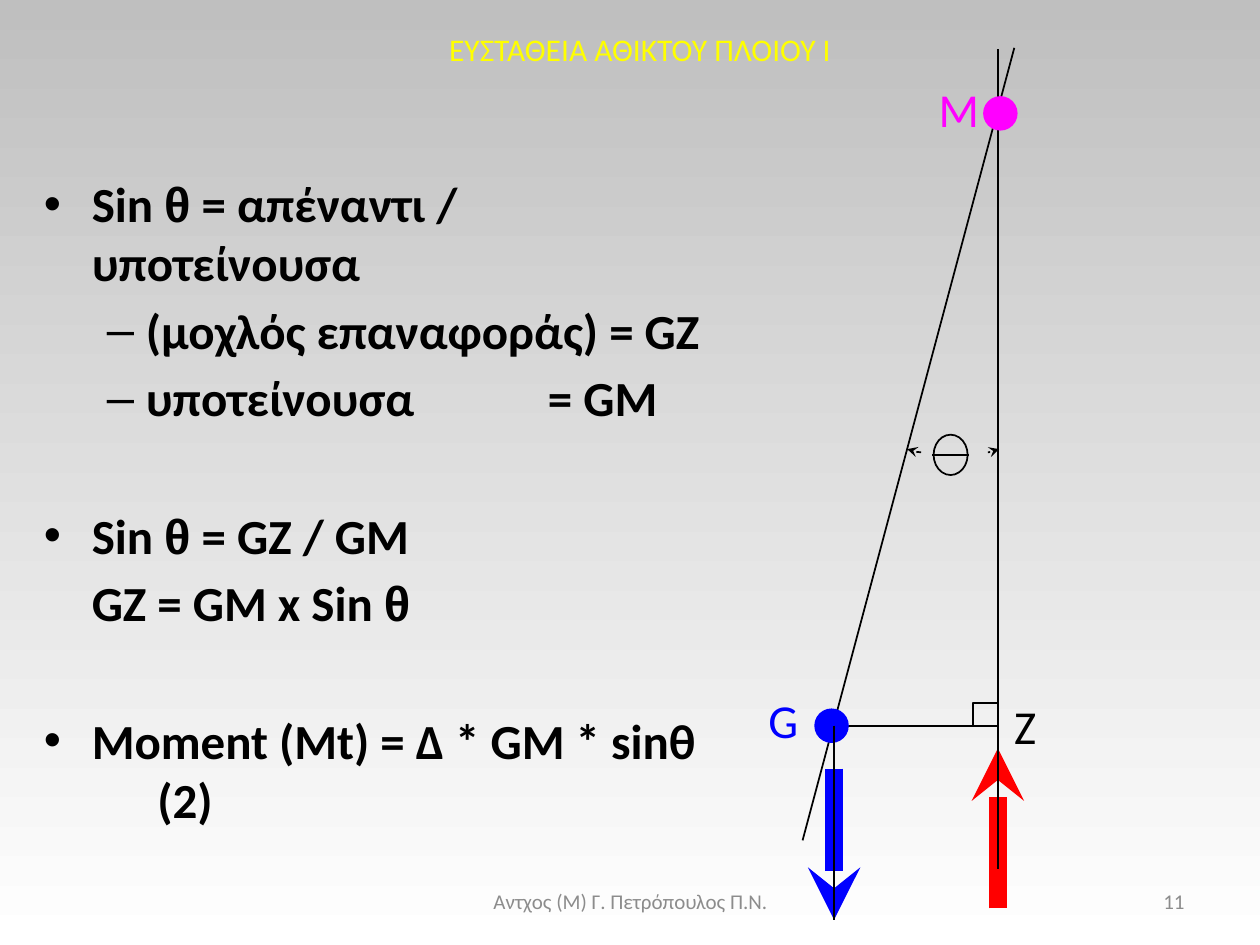
from lxml.etree import SubElement
from pptx import Presentation
from pptx.dml.color import RGBColor
from pptx.enum.shapes import MSO_CONNECTOR, MSO_SHAPE
from pptx.enum.text import MSO_ANCHOR as ANCHOR, PP_ALIGN as ALIGN
from pptx.oxml.ns import qn
from pptx.util import Inches, Pt

COLORS = {
    "top": "BFBFBF", "bottom": "FFFFFF", "title": "FFFF00", "muted": "8C8C8C",
    "ink": "000000", "weight": "0000FF", "buoyancy": "FF0000", "metacentre": "FF00FF",
}
FONT, GREEK_FONT = "Calibri", "Arial"


def rgb(name):
    return RGBColor.from_string(COLORS[name])


def style(target, formats):
    for name, value in formats.items():
        setattr(target, name, value)


def add_run(paragraph, text, color, size, font=FONT, bold=False):
    run = paragraph.add_run()
    run.text = text
    style(run.font, {"name": font, "size": Pt(size), "bold": bold})
    run.font.color.rgb = rgb(color)


def add_label(shapes, box, text, color, size, align=ALIGN.LEFT, wrap=True, spacing=1.0):
    frame = shapes.add_textbox(*map(Inches, box)).text_frame
    style(frame, {"word_wrap": wrap, "vertical_anchor": ANCHOR.MIDDLE})
    style(frame.paragraphs[0], {"alignment": align, "line_spacing": spacing})
    add_run(frame.paragraphs[0], text, color, size)


def set_line(shape, color, width, arrow=False):
    shape.line.color.rgb = rgb(color)
    shape.line.width = Pt(width)
    if arrow:
        SubElement(shape.line._get_or_add_ln(), qn("a:tailEnd"), type="stealth")


def add_line(shapes, start, end, color="ink", width=1, arrow=False):
    line = shapes.add_connector(MSO_CONNECTOR.STRAIGHT, *map(Inches, start + end))
    set_line(line, color, width, arrow)
    SubElement(line._element.spPr, qn("a:effectLst"))


def add_path(shapes, points, close=False, arrow=False):
    corners = [tuple(map(Inches, point)) for point in points]
    builder = shapes.build_freeform(*corners[0])
    builder.add_line_segments(corners[1:], close=close)
    path = builder.convert_to_shape()
    path.fill.background()
    path.shadow.inherit = False
    set_line(path, "ink", 1, arrow)


def add_ellipse(shapes, box, color="ink", filled=True):
    ellipse = shapes.add_shape(MSO_SHAPE.OVAL, *map(Inches, box))
    ellipse.shadow.inherit = False
    if filled:
        ellipse.fill.solid()
        ellipse.fill.fore_color.rgb = rgb(color)
    else:
        ellipse.fill.background()
    set_line(ellipse, color, 1)


def paint_background(slide):
    fill = slide.background.fill
    fill.gradient()
    fill.gradient_angle = 270
    for stop, position, name in zip(fill.gradient_stops, (0, 1), ("top", "bottom")):
        stop.position = position
        stop.color.rgb = rgb(name)


def add_formulas(slide, box):
    # (bullet, left margin, hanging indent, space before, tab stop, text)
    lines = [
        ("•", 0.38, -0.38, 5, None, "Sin θ = απέναντι / υποτείνουσα"),
        ("–", 0.81, -0.31, 5, None, "(μοχλός επαναφοράς) = GZ"),
        ("–", 0.81, -0.31, 5, 4.0, "υποτείνουσα\t= GM"),
        ("•", 0.38, -0.38, 45, None, "Sin θ = GZ / GM"),
        (None, 0.38, 0, 5, None, "GZ = GM x Sin θ"),
        ("•", 0.38, -0.38, 45, 0.9, "Moment (Mt) = Δ * GM * sinθ\n\t(2)"),
    ]
    frame = slide.shapes.add_textbox(*map(Inches, box)).text_frame
    frame.word_wrap = True
    for index, (bullet, margin, indent, before, tab, text) in enumerate(lines):
        paragraph = frame.add_paragraph() if index else frame.paragraphs[0]
        paragraph.space_before = Pt(before)
        props = paragraph._p.get_or_add_pPr()
        props.set("marL", str(Inches(margin)))
        props.set("indent", str(Inches(indent)))
        if bullet:
            SubElement(props, qn("a:buFont"), typeface=GREEK_FONT)
            SubElement(props, qn("a:buChar"), char=bullet)
        else:
            SubElement(props, qn("a:buNone"))
        if tab:
            stops = SubElement(props, qn("a:tabLst"))
            SubElement(stops, qn("a:tab"), pos=str(Inches(tab)), algn="l")
        for row, part in enumerate(text.split("\n")):
            if row:
                paragraph.add_line_break()
            # A free-standing θ is set in its own font
            before_theta, theta, after_theta = part.partition(" θ")
            pieces = [(before_theta + " " * bool(theta), FONT),
                      (theta.strip(), GREEK_FONT), (after_theta, FONT)]
            for piece, font in pieces:
                if piece:
                    add_run(paragraph, piece, "ink", 28, font, bold=True)


def add_triangle(slide, box):
    left, top, width, height = box
    shapes = slide.shapes.add_group_shape().shapes
    g_x, z_x = left + 0.62, left + 1.92
    base = top + 5.38

    # Weight and buoyancy forces
    add_line(shapes, (g_x, base + 0.34), (g_x, top + height), "weight", 10, True)
    add_line(shapes, (z_x, base + 1.45), (z_x, base + 0.18), "buoyancy", 10, True)

    # Vertical, inclined axis and righting lever
    add_line(shapes, (z_x, top + 0.01), (z_x, top + 6.52))
    add_line(shapes, (left + 2.05, top), (left + 0.37, top + 6.29))
    add_line(shapes, (g_x, base), (z_x, base))

    # Right angle mark
    corner = 0.2
    add_path(shapes, [(z_x - corner, base), (z_x - corner, base - 0.18),
                      (z_x, base - 0.18), (z_x, base)], close=True)

    # Points G, M and Z
    add_ellipse(shapes, (left + 0.47, base - 0.13, 0.26, 0.26), "weight")
    add_ellipse(shapes, (left + 1.81, top + 0.39, 0.26, 0.26), "metacentre")
    for text, x, y, label_width, color in [
        ("M", 1.35, 0.28, 0.51, "metacentre"),
        ("G", 0, 5.13, 0.49, "weight"),
        ("Z", 1.95, 5.17, 0.43, "ink"),
    ]:
        add_label(shapes, (left + x, top + y, label_width, 0.48), text, color, 27,
                  wrap=False, spacing=0.85)
    add_line(shapes, (g_x, base), (g_x, top + height))


def add_angle(slide, box):
    left, top, width, height = box
    shapes = slide.shapes.add_group_shape().shapes
    # Theta drawn as an ellipse with a bar
    add_ellipse(shapes, (left + 0.21, top, 0.27, height), filled=False)
    add_line(shapes, (left + 0.2, top + height / 2), (left + 0.49, top + height / 2))
    # Arrowed arcs towards both sides
    right = left + width
    for inner, middle, tip in [(left + 0.11, left + 0.05, left),
                               (right - 0.09, right - 0.04, right)]:
        add_path(shapes, [(inner, top + 0.14), (middle, top + 0.135), (tip, top + 0.115)],
                 arrow=True)


def main():
    deck = Presentation()
    deck.slide_width, deck.slide_height = Inches(10), Inches(7.5)
    slide = deck.slides.add_slide(deck.slide_layouts[6])
    paint_background(slide)

    # Footer, page number and title
    for box, text, color, size, align in [
        ((3.42, 6.95, 3.17, 0.4), "Αντχος (Μ) Γ. Πετρόπουλος Π.Ν.", "muted", 12, ALIGN.CENTER),
        ((7.17, 6.95, 2.33, 0.4), "11", "muted", 12, ALIGN.RIGHT),
        ((0.83, 0.19, 8.5, 0.4), "ΕΥΣΤΑΘΕΙΑ ΑΘΙΚΤΟΥ ΠΛΟΙΟΥ I", "title", 18, ALIGN.CENTER),
    ]:
        add_label(slide.shapes, box, text, color, size, align)

    add_triangle(slide, (6, 0.38, 2.38, 6.92))
    add_angle(slide, (7.2, 3.45, 0.73, 0.32))
    add_formulas(slide, (0.25, 1.33, 5.52, 4.77))
    deck.save("out.pptx")


if __name__ == "__main__":
    main()
